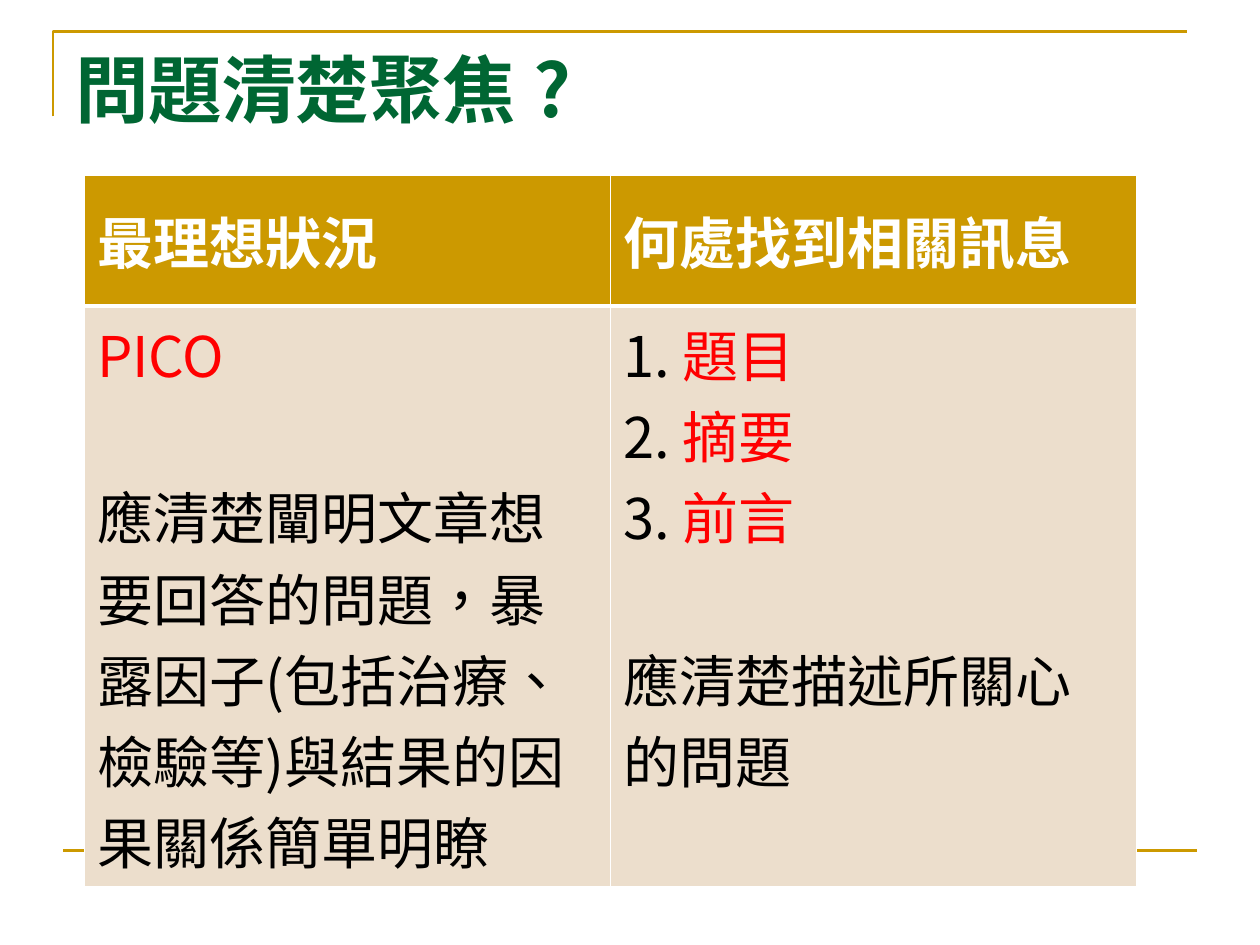
from lxml import etree
from pptx import Presentation
from pptx import util as u
from pptx.dml.color import RGBColor
from pptx.enum import shapes, text
from pptx.oxml.ns import qn

W, H = u.Inches(10), u.Inches(7.5)
FONT = "Noto Sans CJK SC"
COLORS = {"gold": "CC9900", "green": "006633", "sand": "ECDECC",
          "white": "FFFFFF", "red": "FF0000", "black": "000000"}
TITLE = {"size": u.Pt(42), "bold": True}
HEAD = {"size": u.Pt(32), "bold": True}
BODY = {"size": u.Pt(32), "bold": False}
LINE_GAP = u.Pt(46.34)  # one line of body text
HEAD_ROWS, BODY_ROWS = 1.04, 4.6  # header and body heights, as parts of the table

HEADERS = ["最理想狀況", "何處找到相關訊息"]
# Each paragraph: (space before, [(text, colour), ...])
IDEAL = [(0, [("PICO", "red")]),
         (LINE_GAP, [("應清楚闡明文章想要回答的問題，暴露因子(包括治療、檢驗等)"
                      "與結果的因果關係簡單明瞭", "black")])]
SOURCES = [(0, [(f"{n}. ", "black"), (part, "red")])
           for n, part in enumerate(["題目", "摘要", "前言"], 1)]
SOURCES.append((LINE_GAP, [("應清楚描述所關心的問題", "black")]))


def rgb(name):
    return RGBColor.from_string(COLORS[name])


def share(x, y, w, h):
    """Box in EMU from shares of the slide's size."""
    return int(x * W), int(y * H), int(w * W), int(h * H)


def add_run(p, words, color, style):
    r = p.add_run()
    r.text = words
    for key, value in {"name": FONT, **style}.items():
        setattr(r.font, key, value)
    r.font.color.rgb = rgb(color)
    rPr = r._r.get_or_add_rPr()
    rPr.set("lang", "zh-TW")
    etree.SubElement(rPr, qn("a:ea"), typeface=FONT)


def fill_text(tf, paragraphs, style):
    for i, (gap, runs) in enumerate(paragraphs):
        p = tf.paragraphs[0] if i == 0 else tf.add_paragraph()
        p.space_before = gap
        for words, color in runs:
            add_run(p, words, color, style)


def style_line(sp):
    sp.line.color.rgb = rgb("gold")
    sp.line.width = u.Pt(1.5)


def add_frame(s, box):
    """Corner rule at the top left and a rule across the foot."""
    x, y, w, h = box
    fb = s.shapes.build_freeform(x, y + h)
    fb.add_line_segments([(x, y), (x + w, y)], close=False)
    corner = fb.convert_to_shape()
    corner.fill.background()
    corner.shadow.inherit = False
    style_line(corner)

    foot = s.shapes.add_connector(shapes.MSO_CONNECTOR.STRAIGHT,
                                  int(0.05 * W), int(0.9 * H),
                                  int(0.95 * W), int(0.9 * H))
    etree.SubElement(foot._element.spPr, qn("a:effectLst"))
    style_line(foot)


def add_title(s, box):
    tf = s.shapes.add_textbox(*box).text_frame
    tf.word_wrap = True
    tf.vertical_anchor = text.MSO_ANCHOR.TOP
    fill_text(tf, [(0, [("問題清楚聚焦 ?", "green")])], TITLE)


def set_borders(cell, widths):
    tcPr = cell._tc.get_or_add_tcPr()
    for i, (side, width) in enumerate(widths.items()):
        ln = etree.Element(qn(f"a:ln{side}"), w=str(u.Pt(width)))
        fill = etree.SubElement(ln, qn("a:solidFill"))
        etree.SubElement(fill, qn("a:srgbClr"), val=COLORS["white"])
        tcPr.insert(i, ln)


def add_comparison(s, box):
    """Two equal columns: a header row and a body row."""
    x, y, w, h = box
    table = s.shapes.add_table(2, 2, x, y, w, h).table
    table.rows[0].height = int(HEAD_ROWS / (HEAD_ROWS + BODY_ROWS) * h)
    table.rows[1].height = h - table.rows[0].height
    for col, body in enumerate([IDEAL, SOURCES]):
        head = [(0, [(HEADERS[col], "white")])]
        for row, (paragraphs, style, color) in enumerate(
                [(head, HEAD, "gold"), (body, BODY, "sand")]):
            cell = table.cell(row, col)
            cell.fill.solid()
            cell.fill.fore_color.rgb = rgb(color)
            cell.vertical_anchor = (text.MSO_ANCHOR.TOP if row
                                    else text.MSO_ANCHOR.MIDDLE)
            fill_text(cell.text_frame, paragraphs, style)
            set_borders(cell, {"L": 1, "R": 1, "T": 1 if row == 0 else 3,
                               "B": 3 if row == 0 else 1})


def main():
    prs = Presentation()
    prs.slide_width, prs.slide_height = W, H
    s = prs.slides.add_slide(prs.slide_layouts[6])
    add_frame(s, share(0.042, 0.033, 0.9, 0.09))
    add_title(s, share(0.05, 0.04, 0.9, 1 / 6))
    add_comparison(s, share(0.067, 0.185, 0.835, 0.753))
    prs.save("out.pptx")


if __name__ == "__main__":
    main()
